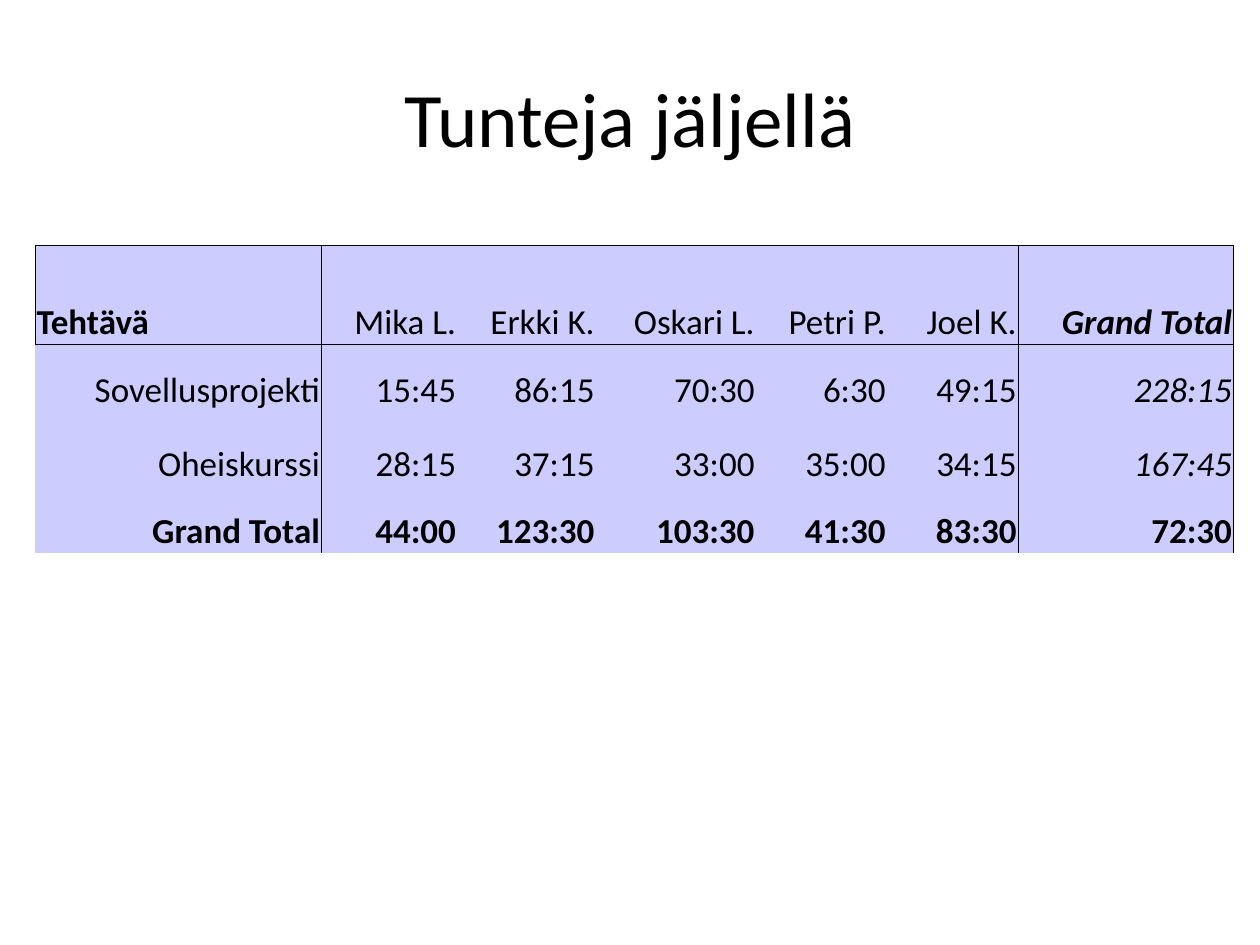
from lxml import etree
from pptx import Presentation
from pptx.dml.color import RGBColor
from pptx.enum.text import MSO_ANCHOR, PP_ALIGN
from pptx.oxml.ns import qn
from pptx.util import Inches, Pt

BLACK = RGBColor(0x00, 0x00, 0x00)
LAVENDER = RGBColor(0xCC, 0xCC, 0xFF)
LEFT, CENTER, RIGHT = PP_ALIGN.LEFT, PP_ALIGN.CENTER, PP_ALIGN.RIGHT
MIDDLE, BOTTOM = MSO_ANCHOR.MIDDLE, MSO_ANCHOR.BOTTOM
FONT = "Calibri"
BORDER_WIDTH = Pt(0.5)

COLUMN_WIDTHS = [2.27, 1.08, 1.1, 1.27, 1.04, 1.04, 1.71]
ROW_HEIGHTS = [0.78, 0.54, 0.59, 0.53]
HOURS = [
    ["Tehtävä", "Mika L.", "Erkki K.", "Oskari L.", "Petri P.", "Joel K.", "Grand Total"],
    ["Sovellusprojekti", "15:45", "86:15", "70:30", "6:30", "49:15", "228:15"],
    ["Oheiskurssi", "28:15", "37:15", "33:00", "35:00", "34:15", "167:45"],
    ["Grand Total", "44:00", "123:30", "103:30", "41:30", "83:30", "72:30"],
]
LAST_ROW = len(HOURS) - 1
TOTAL_COLUMN = len(HOURS[0]) - 1
RULED_COLUMNS = {0, TOTAL_COLUMN - 1, TOTAL_COLUMN}  # a line runs down their right side


def set_attributes(target, values):
    for name, value in values.items():
        setattr(target, name, value)


def write_text(text_frame, text, alignment, size, bold=False, italic=False):
    paragraph = text_frame.paragraphs[0]
    paragraph.alignment = alignment
    run = paragraph.add_run()
    run.text = text
    set_attributes(run.font, {"name": FONT, "size": Pt(size), "bold": bold, "italic": italic})
    run.font.color.rgb = BLACK


def add_title(slide, left, top, width, height):
    title = slide.shapes.add_textbox(left, top, width, height)
    set_attributes(title.text_frame, {"word_wrap": True, "vertical_anchor": MIDDLE})
    write_text(title.text_frame, "Tunteja jäljellä", CENTER, 44)


def set_borders(cell, row, column):
    """Box the header cells and rule the chosen columns; hide every other border."""
    visible = {
        "a:lnL": column - 1 in RULED_COLUMNS or (row == 0 and column == 0),
        "a:lnR": column in RULED_COLUMNS,
        "a:lnT": row <= 1,
        "a:lnB": row == 0,
    }
    properties = cell._tc.get_or_add_tcPr()
    for tag, is_visible in visible.items():
        line = etree.SubElement(properties, qn(tag), w=str(BORDER_WIDTH))
        if is_visible:
            fill = etree.SubElement(line, qn("a:solidFill"))
            etree.SubElement(fill, qn("a:srgbClr"), val=str(BLACK))
        else:
            etree.SubElement(line, qn("a:noFill"))


def format_cell(cell, text, row, column):
    set_borders(cell, row, column)
    cell.fill.solid()
    cell.fill.fore_color.rgb = LAVENDER
    set_attributes(cell, {
        "vertical_anchor": BOTTOM,
        "margin_left": Inches(0.01),
        "margin_right": Inches(0.01),
        "margin_top": Inches(0.01),
        "margin_bottom": Inches(0),
    })
    is_corner = row == 0 and column == 0
    is_total = column == TOTAL_COLUMN
    write_text(
        cell.text_frame, text, LEFT if is_corner else RIGHT, 20,
        bold=is_corner or row == LAST_ROW or (row == 0 and is_total),
        italic=is_total and row < LAST_ROW,
    )


def add_hours_table(slide, left, top, width, height):
    frame = slide.shapes.add_table(len(HOURS), len(HOURS[0]), left, top, width, height)
    table = frame.table
    set_attributes(table, {"first_row": False, "horz_banding": False})
    for column, column_width in zip(table.columns, COLUMN_WIDTHS):
        column.width = Inches(column_width)
    for row, row_height in zip(table.rows, ROW_HEIGHTS):
        row.height = Inches(row_height)
    for row, texts in enumerate(HOURS):
        for column, text in enumerate(texts):
            format_cell(table.cell(row, column), text, row, column)


def main():
    presentation = Presentation()
    presentation.slide_width = Inches(10)
    presentation.slide_height = Inches(7.5)
    slide = presentation.slides.add_slide(presentation.slide_layouts[6])
    add_title(slide, Inches(0.5), Inches(0.3), Inches(9), Inches(1.25))
    add_hours_table(slide, Inches(0.28), Inches(1.95),
                    Inches(sum(COLUMN_WIDTHS)), Inches(sum(ROW_HEIGHTS)))
    presentation.save("out.pptx")


if __name__ == "__main__":
    main()
